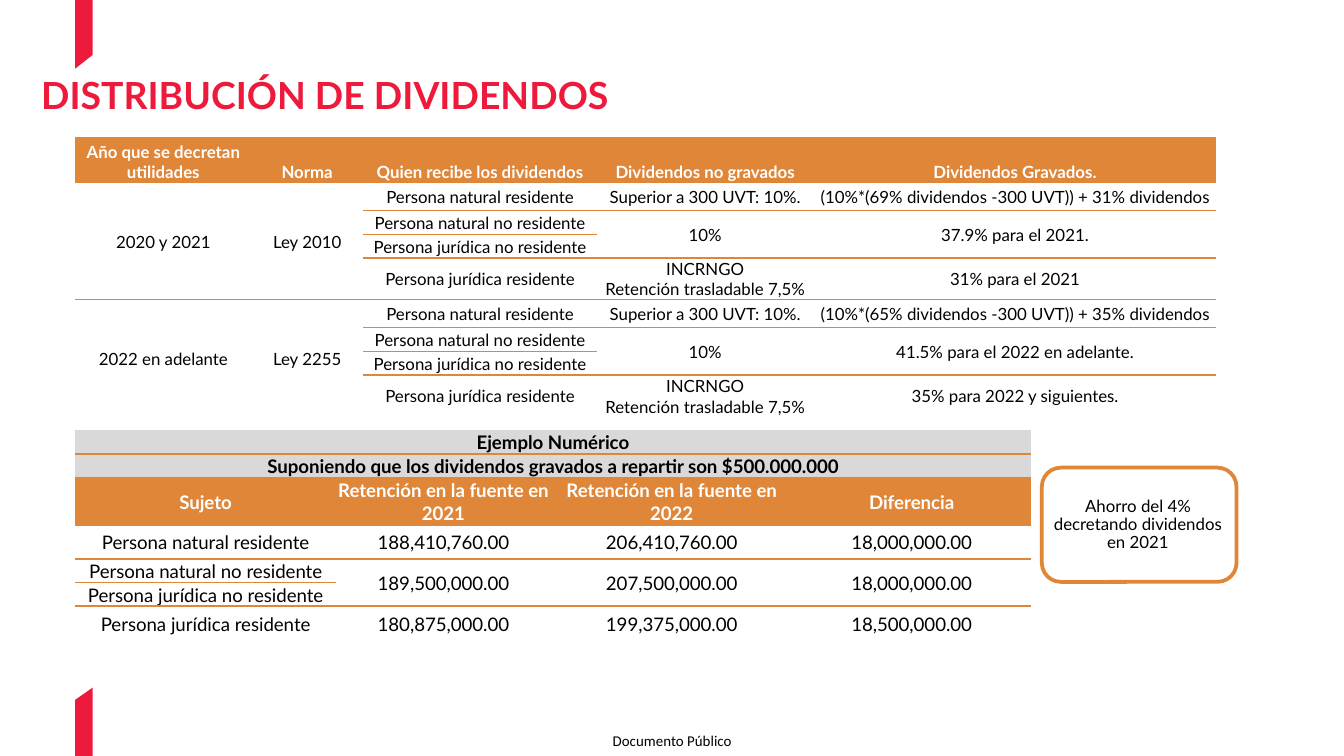
"""Build the slide on dividend distribution with two tables and a callout."""
import pptx
import pptx.dml.color
import pptx.enum.shapes
import pptx.enum.text
import pptx.util
from lxml import etree
from pptx.oxml.ns import qn

Cm = pptx.util.Cm
Pt = pptx.util.Pt
MID = pptx.enum.text.MSO_ANCHOR.MIDDLE
LOW = pptx.enum.text.MSO_ANCHOR.BOTTOM
TOP = pptx.enum.text.MSO_ANCHOR.TOP
CENTER = pptx.enum.text.PP_ALIGN.CENTER
LEFT = pptx.enum.text.PP_ALIGN.LEFT
RED, ORANGE, GRAY = "ED1A3B", "DF8639", "D9D9D9"
BLACK, WHITE = "000000", "FFFFFF"


def color(code):
    return pptx.dml.color.RGBColor.from_string(code)


def style(frame, size, code, bold=False, font="Lato", align=CENTER):
    for para in frame.paragraphs:
        para.alignment = align
        for run in para.runs:
            run.font.name = font
            run.font.size = Pt(size)
            run.font.bold = bold
            run.font.color.rgb = color(code)


deck = pptx.Presentation()
deck.slide_width = Cm(25.4)
deck.slide_height = Cm(14.29)
slide = deck.slides.add_slide(deck.slide_layouts[6])
shapes = slide.shapes

for left, right, edge in [(13.23, 13, 14.29), (1.3, 1.04, 0)]:
    pen = shapes.build_freeform(Cm(1.42), Cm(left))
    pen.add_line_segments([(Cm(1.42), Cm(edge)), (Cm(1.75), Cm(edge)), (Cm(1.75), Cm(right))])
    mark = pen.convert_to_shape()
    mark.shadow.inherit = False
    mark.fill.solid()
    mark.fill.fore_color.rgb = color(RED)
    mark.line.fill.background()

people = [
    "Persona natural residente",
    "Persona natural no residente",
    "Persona jurídica no residente",
    "Persona jurídica residente",
]
rules = [["Año que se decretan utilidades", "Norma", "Quien recibe los dividendos",
          "Dividendos no gravados", "Dividendos Gravados."]]
for year, law, taxed in [
    ("2020 y 2021", "Ley 2010", ["(10%*(69% dividendos -300 UVT)) + 31% dividendos",
                                 "37.9% para el 2021.", "", "31% para el 2021"]),
    ("2022 en adelante", "Ley 2255", ["(10%*(65% dividendos -300 UVT)) + 35% dividendos",
                                      "41.5% para el 2022 en adelante.", "", "35% para 2022 y siguientes."]),
]:
    free = ["Superior a 300 UVT: 10%.", "10%", "", "INCRNGO\nRetención trasladable 7,5%"]
    rules += [list(row) for row in zip([year, "", "", ""], [law, "", "", ""], people, free, taxed)]

sums = [
    ["Ejemplo Numérico", "", "", ""],
    ["Suponiendo que los dividendos gravados a repartir son $500.000.000", "", "", ""],
    ["Sujeto", "Retención en la fuente en 2021", "Retención en la fuente en 2022", "Diferencia"],
    [people[0], "188,410,760.00", "206,410,760.00", "18,000,000.00"],
    [people[1], "189,500,000.00", "207,500,000.00", "18,000,000.00"],
    [people[2], "", "", ""],
    [people[3], "180,875,000.00", "199,375,000.00", "18,500,000.00"],
]

spans = [(top, col, top + 3, col) for top in (1, 5) for col in (0, 1)]
spans += [(top, col, top + 1, col) for top in (2, 6) for col in (3, 4)]
joins = [(0, 0, 0, 3), (1, 0, 1, 3)] + [(4, col, 5, col) for col in (1, 2, 3)]
block = [0.53, 0.45, 0.45, 0.78]

for data, top, wides, highs, merges, size, fills, head, base in [
    (rules, 2.59, [3.33, 2.11, 4.42, 4.09, 7.62], [0.86] + block * 2,
     spans, 9, [ORANGE] + [WHITE] * 8, 0, LOW),
    (sums, 8.13, [4.93, 4.06, 4.57, 4.5], [0.45, 0.43, 0.91, 0.63, 0.45, 0.44, 0.68],
     joins, 10, [GRAY, GRAY, ORANGE] + [None] * 4, 2, MID),
]:
    frame = shapes.add_table(len(data), len(wides), Cm(1.42), Cm(top), Cm(sum(wides)), Cm(sum(highs)))
    table = frame.table
    table.first_row = False
    table.horz_banding = False
    plain = table._tbl.tblPr.find(qn("a:tableStyleId"))
    plain.text = "{2D5ABB26-0587-4C30-8999-92F81FD0307C}"
    for col, wide in zip(table.columns, wides):
        col.width = Cm(wide)
    for row, high in zip(table.rows, highs):
        row.height = Cm(high)
    for r1, c1, r2, c2 in merges:
        table.cell(r1, c1).merge(table.cell(r2, c2))
    for r, texts in enumerate(data):
        for c, text in enumerate(texts):
            cell = table.cell(r, c)
            cell.margin_left = cell.margin_right = cell.margin_top = Cm(0.02)
            cell.margin_bottom = 0
            cell.vertical_anchor = base if r == head else MID
            if fills[r]:
                cell.fill.solid()
                cell.fill.fore_color.rgb = color(fills[r])
            else:
                cell.fill.background()
            cell.text_frame.text = text
            style(cell.text_frame, size, WHITE if r == head else BLACK, r <= head)
            if r and not cell.is_spanned:
                line = etree.Element(qn("a:lnT"), w=str(Pt(1)))
                fill = etree.SubElement(line, qn("a:solidFill"))
                etree.SubElement(fill, qn("a:srgbClr"), val=ORANGE)
                cell._tc.get_or_add_tcPr().insert(0, line)

box = shapes.add_shape(pptx.enum.shapes.MSO_SHAPE.ROUNDED_RECTANGLE,
                       Cm(19.69), Cm(8.84), Cm(3.68), Cm(2.16))
box.shadow.inherit = False
box.fill.background()
box.line.color.rgb = color(ORANGE)
box.line.width = Pt(2)

for text, left, top, wide, high, size, code, bold, font, align, base, inset, space in [
    ("DISTRIBUCIÓN DE DIVIDENDOS", 0.53, 1.4, 23.65, 0.89, 20, RED, True, "Lato", LEFT, TOP, 0.25, 0.8),
    ("Ahorro del 4% decretando dividendos en 2021", 19.69, 8.84, 3.63, 2.16,
     9, BLACK, False, "Lato", CENTER, MID, 0.2, 0.9),
    ("Documento Público", 11.23, 13.67, 2.95, 0.64, 8, BLACK, False, "Calibri", CENTER, MID, 0, 1),
]:
    note = shapes.add_textbox(Cm(left), Cm(top), Cm(wide), Cm(high)).text_frame
    note.word_wrap = True
    note.vertical_anchor = base
    note.margin_left = note.margin_right = Cm(inset)
    note.margin_top = note.margin_bottom = Cm(inset / 2)
    note.text = text
    note.paragraphs[0].line_spacing = space
    style(note, size, code, bold, font, align)

deck.save("out.pptx")
